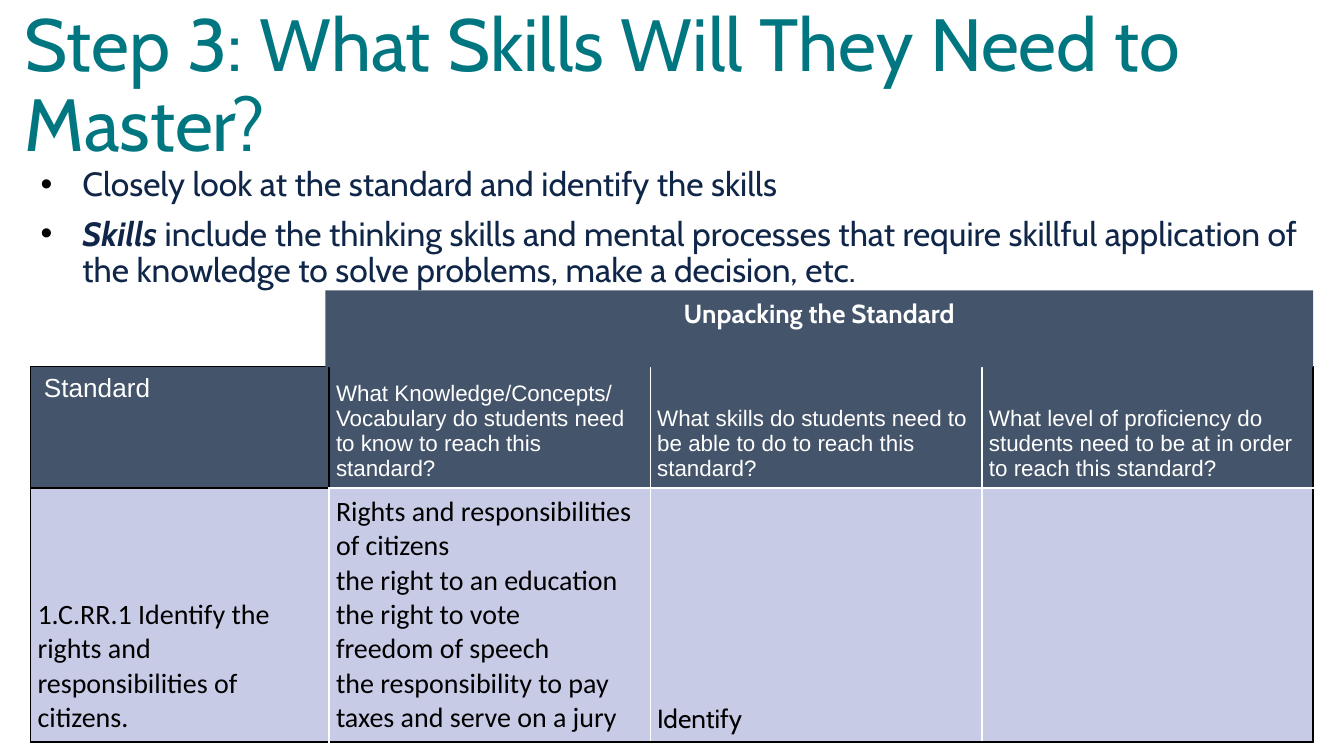
from lxml import etree
from pptx import Presentation
from pptx import util as u
from pptx.dml.color import RGBColor
from pptx.enum import shapes, text
from pptx.oxml.ns import qn

TEAL = RGBColor(0x00, 0x77, 0x80)
NAVY = RGBColor(0x10, 0x26, 0x49)
SLATE = RGBColor(0x44, 0x54, 0x6A)
LAVENDER = RGBColor(0xC8, 0xCB, 0xE6)
WHITE = RGBColor(0xFF, 0xFF, 0xFF)
BLACK = RGBColor(0x00, 0x00, 0x00)

LEFT = u.Cm(0.58)
COLUMNS = [5.64, 6.07, 6.27, 6.25]
ROWS = [2.13, 4.8]
HEADERS = [
    "Standard",
    "What Knowledge/Concepts/ Vocabulary do students need to know to reach this standard?",
    "What skills do students need to be able to do to reach this standard?",
    "What level of proficiency do students need to be at in order to reach this standard?",
]
KNOWLEDGE = [
    "Rights and responsibilities of citizens",
    "the right to an education",
    "the right to vote",
    "freedom of speech",
    "the responsibility to pay taxes and serve on a jury\u00a0",
]
ANSWERS = [
    ["1.C.RR.1 Identify the rights and responsibilities of citizens."],
    KNOWLEDGE,
    ["Identify"],
    [],
]


def add_run(p, words, size, font, color, bold=False, italic=False):
    r = p.add_run()
    r.text = words
    r.font.size = u.Pt(size)
    r.font.name = font
    r.font.color.rgb = color
    r.font.bold = bold
    r.font.italic = italic


def add_box(s, left, top, width, height):
    tf = s.shapes.add_textbox(u.Cm(left), u.Cm(top), u.Cm(width), u.Cm(height)).text_frame
    tf.word_wrap = True
    tf.margin_left = tf.margin_right = u.Cm(0.19)
    tf.margin_top = tf.margin_bottom = u.Cm(0.1)
    return tf


def add_title(s):
    p = add_box(s, 0.28, 0.05, 22.5, 2.74).paragraphs[0]
    p.line_spacing = 0.9
    add_run(p, "Step 3: What Skills Will They Need to Master?", 39.6, "Cabin", TEAL)


def set_bullet(p):
    pPr = p._p.get_or_add_pPr()
    pPr.set("marL", str(u.Cm(0.79)))
    pPr.set("indent", str(-u.Cm(0.79)))
    color = etree.SubElement(pPr, qn("a:buClr"))
    etree.SubElement(color, qn("a:srgbClr"), val=str(BLACK))
    etree.SubElement(pPr, qn("a:buFont"), typeface="Arial")
    etree.SubElement(pPr, qn("a:buChar"), char="•")


def add_bullets(s):
    tf = add_box(s, 0.58, 3.07, 24.23, 10.21)
    first, second = tf.paragraphs[0], tf.add_paragraph()
    for p in (first, second):
        set_bullet(p)
        p.line_spacing = 0.9
    second.space_before = u.Pt(7)
    add_run(first, "Closely look at the standard and identify the skills", 18, "Cabin", NAVY)
    add_run(second, "Skills", 18, "Cabin", NAVY, bold=True, italic=True)
    add_run(second, " include the thinking skills and mental processes that require skillful "
            "application of the knowledge to solve problems, make a decision, etc.",
            18, "Cabin", NAVY)


def set_borders(cell, left, right, top, bottom):
    tcPr = cell._tc.get_or_add_tcPr()
    sides = zip(("a:lnL", "a:lnR", "a:lnT", "a:lnB"), (left, right, top, bottom))
    for i, (side, color) in enumerate(sides):
        ln = etree.Element(qn(side), w=str(u.Pt(1)))
        fill = etree.SubElement(ln, qn("a:solidFill"))
        etree.SubElement(fill, qn("a:srgbClr"), val=str(color))
        tcPr.insert(i, ln)


def fill_cell(cell, lines, fill, size, font, color):
    cell.fill.solid()
    cell.fill.fore_color.rgb = fill
    cell.vertical_anchor = text.MSO_ANCHOR.BOTTOM
    cell.margin_left = cell.margin_right = u.Cm(0.13)
    cell.margin_top = cell.margin_bottom = u.Cm(0.13)
    tf = cell.text_frame
    for i, line in enumerate(lines):
        p = tf.add_paragraph() if i else tf.paragraphs[0]
        add_run(p, line, size, font, color)


def add_standard_table(s):
    table = s.shapes.add_table(2, 4, LEFT, u.Cm(6.93), u.Cm(sum(COLUMNS)), u.Cm(sum(ROWS))).table
    for column, width in zip(table.columns, COLUMNS):
        column.width = u.Cm(width)
    for row, height in zip(table.rows, ROWS):
        row.height = u.Cm(height)
    last = len(COLUMNS) - 1
    for c, (header, answer) in enumerate(zip(HEADERS, ANSWERS)):
        top, bottom = table.cell(0, c), table.cell(1, c)
        fill_cell(top, [header], SLATE, 12 if c else 14, "Arial", WHITE)
        answer_style = (14, "Cabin") if c == 2 else (15, "Calibri")
        fill_cell(bottom, answer, LAVENDER, *answer_style, BLACK)
        left = WHITE if c else BLACK
        right = BLACK if c == last else WHITE
        set_borders(top, BLACK if c < 2 else WHITE, right if c else BLACK, left, left)
        set_borders(bottom, left, right, left, BLACK)
    corner = table.cell(0, 0)
    corner.vertical_anchor = text.MSO_ANCHOR.TOP
    corner.margin_left = corner.margin_right = u.Cm(0.25)


def add_banner(s):
    sp = s.shapes.add_shape(shapes.MSO_SHAPE.RECTANGLE,
                            u.Cm(6.15), u.Cm(5.49), u.Cm(18.67), u.Cm(1.45))
    sp.shadow.inherit = False
    sp.fill.solid()
    sp.fill.fore_color.rgb = SLATE
    sp.line.fill.background()
    tf = sp.text_frame
    tf.word_wrap = True
    tf.vertical_anchor = text.MSO_ANCHOR.TOP
    p = tf.paragraphs[0]
    p.alignment = text.PP_ALIGN.CENTER
    add_run(p, "Unpacking the Standard", 14, "Cabin", WHITE, bold=True)


def main():
    prs = Presentation()
    prs.slide_width = u.Cm(25.4)
    prs.slide_height = u.Cm(14.29)
    s = prs.slides.add_slide(prs.slide_layouts[6])
    add_title(s)
    add_bullets(s)
    add_standard_table(s)
    add_banner(s)
    prs.save("out.pptx")


if __name__ == "__main__":
    main()
